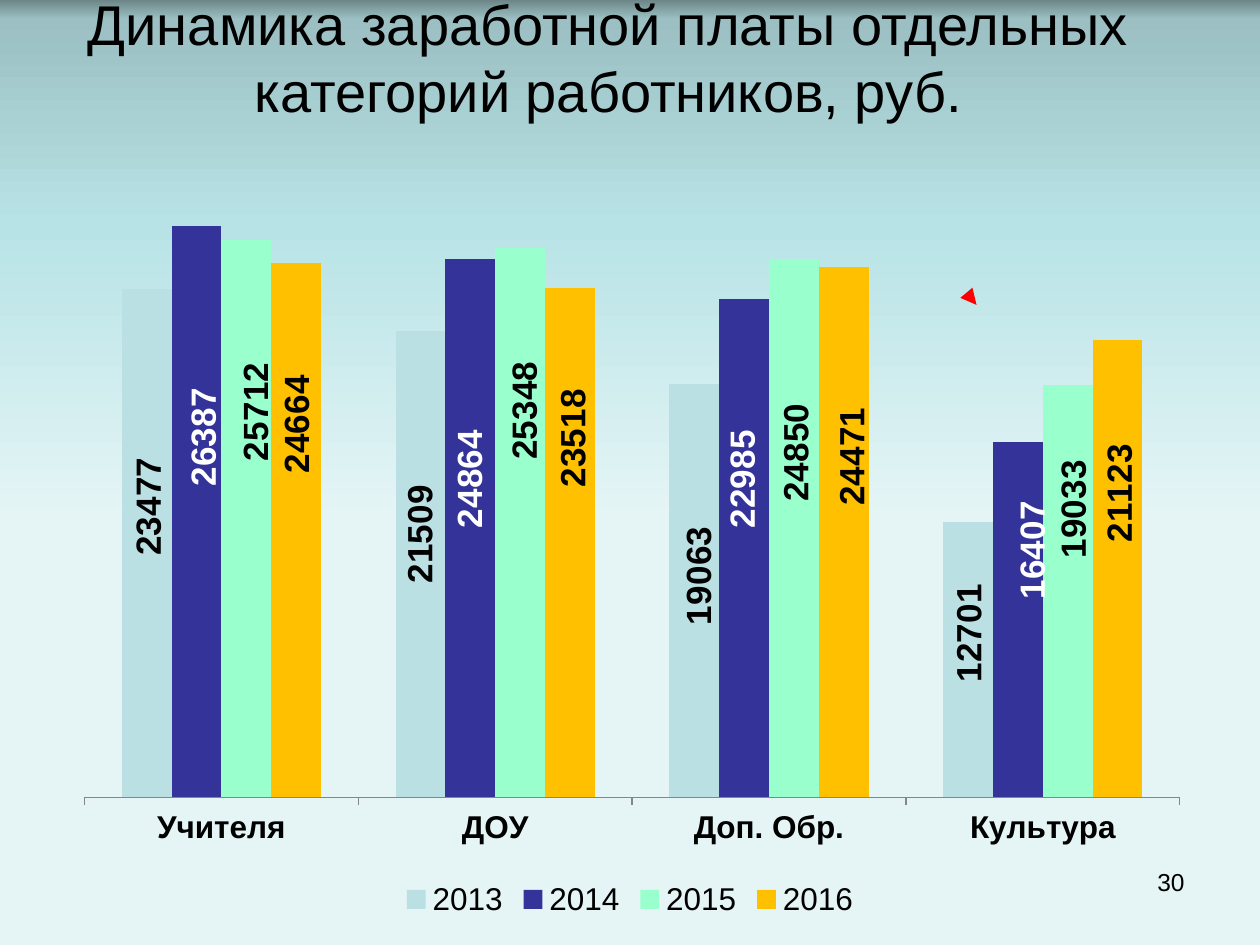
from lxml import etree
from pptx import Presentation
from pptx import util as u
from pptx.chart import data as chart_data
from pptx.dml import color
from pptx.enum import chart as charts, shapes, text
from pptx.oxml import parse_xml
from pptx.oxml.ns import nsdecls, qn

COLORS = {
    "black": "000000", "white": "FFFFFF", "red": "FF0000", "axis": "868686",
    "2013": "BBE0E3", "2014": "333399", "2015": "99FFCC", "2016": "FFC000",
}
BACKGROUND_STOPS = [(0, "6D8688"), (2, "9BBFC2"), (24, "B8E3E6"), (55, "E5F5F6")]
CATEGORIES = ["Учителя", "ДОУ", "Доп. Обр.", "Культура"]
SALARIES = {
    "2013": (23477, 21509, 19063, 12701),
    "2014": (26387, 24864, 22985, 16407),
    "2015": (25712, 25348, 24850, 19033),
    "2016": (24664, 23518, 24471, 21123),
}
LABEL_SHIFTS = {
    "2013": [(0.02, -0.29), (0, -0.24), (0.04, -0.12), (0.01, -0.21)],
    "2014": [(0.06, -0.59), (0, -0.39), (-0.01, -0.55), (0.12, -0.55)],
    "2015": [(0.08, -0.85), (0.04, -0.89), (0.02, -0.6), (0.05, -0.65)],
    "2016": [(0.01, -0.84), (0.03, -0.83), (0.07, -0.6), (0.02, -0.6)],
}
CHART_BOX = (0.5, 1, 9, 6.33)
PLOT_BOX = {"x": 0.019, "y": 0.027, "w": 0.966, "h": 0.815}


def rgb(name):
    return color.RGBColor.from_string(COLORS[name])


def set_attributes(target, values):
    for name, value in values.items():
        setattr(target, name, value)


def set_font(font, size, color_name="black", bold=False):
    set_attributes(font, {"name": "Arial", "size": u.Pt(size), "bold": bold})
    font.color.rgb = rgb(color_name)


def set_background(slide):
    fill = slide.background.fill
    fill.gradient()
    fill.gradient_angle = 270
    stops = slide._element.find(".//" + qn("a:gsLst"))
    for stop in list(stops):
        stops.remove(stop)
    for position, value in BACKGROUND_STOPS:
        stop = etree.SubElement(stops, qn("a:gs"), pos=str(position * 1000))
        etree.SubElement(stop, qn("a:srgbClr"), val=value)


def add_text(slide, box, content, size, alignment, anchor):
    shape = slide.shapes.add_textbox(*map(u.Inches, box))
    set_attributes(shape.text_frame, {"word_wrap": True, "vertical_anchor": anchor})
    paragraph = shape.text_frame.paragraphs[0]
    paragraph.alignment = alignment
    run = paragraph.add_run()
    run.text = content
    set_font(run.font, size)


def add_arrow(slide, start, end):
    arrow = slide.shapes.add_connector(
        shapes.MSO_CONNECTOR.STRAIGHT, *map(u.Inches, start + end))
    arrow.line.color.rgb = rgb("red")
    arrow.line.width = u.Pt(3)
    etree.SubElement(arrow.line._get_or_add_ln(), qn("a:tailEnd"), type="triangle")
    etree.SubElement(arrow._element.spPr, qn("a:effectLst"))


def manual_layout(values, inner=False):
    target = '<c:layoutTarget val="inner"/>' if inner else ""
    modes = '<c:xMode val="edge"/><c:yMode val="edge"/>' if inner else ""
    places = "".join(f'<c:{key} val="{value:.4f}"/>' for key, value in values.items())
    return parse_xml(
        f'<c:layout {nsdecls("c")}><c:manualLayout>{target}{modes}{places}'
        '</c:manualLayout></c:layout>')


def place_plot(chart):
    plot_area = chart._chartSpace.chart.plotArea
    for layout in plot_area.findall(qn("c:layout")):
        plot_area.remove(layout)
    plot_area.insert(0, manual_layout(PLOT_BOX, inner=True))


def label_point(series, index, shift):
    label = series.points[index].data_label
    set_font(label.font, 20, "white" if series.name == "2014" else "black", True)
    label.position = charts.XL_LABEL_POSITION.CENTER
    element = series._element.find(qn("c:dLbls")).findall(qn("c:dLbl"))[index]
    body = element.find(".//" + qn("a:bodyPr"))
    body.set("rot", "-5400000")
    body.set("vert", "horz")
    offsets = {"x": shift[0] / CHART_BOX[2], "y": shift[1] / CHART_BOX[3]}
    element.find(qn("c:idx")).addnext(manual_layout(offsets))


def hide_leader_lines(series):
    for leader in series._element.iter(qn("c:showLeaderLines")):
        leader.set("val", "0")


def style_axes(chart):
    set_attributes(chart.value_axis, {
        "visible": False, "has_major_gridlines": False,
        "minimum_scale": 0, "maximum_scale": 30000})
    axis = chart.category_axis
    set_attributes(axis, {
        "major_tick_mark": charts.XL_TICK_MARK.OUTSIDE, "has_major_gridlines": False})
    set_font(axis.tick_labels.font, 18, bold=True)
    axis.format.line.color.rgb = rgb("axis")
    axis.format.line.width = u.Pt(0.75)


def add_salary_chart(slide):
    values = chart_data.CategoryChartData()
    values.categories = CATEGORIES
    for year, salaries in SALARIES.items():
        values.add_series(year, salaries)
    chart = slide.shapes.add_chart(
        charts.XL_CHART_TYPE.COLUMN_CLUSTERED, *map(u.Inches, CHART_BOX), values).chart
    set_font(chart.font, 18)
    set_attributes(chart, {"has_title": False, "has_legend": True})
    set_attributes(chart.legend, {
        "position": charts.XL_LEGEND_POSITION.BOTTOM, "include_in_layout": False})
    set_font(chart.legend.font, 18)
    set_attributes(chart.plots[0], {
        "gap_width": 150, "overlap": 0, "vary_by_categories": False})
    style_axes(chart)
    place_plot(chart)
    for series in chart.plots[0].series:
        series.format.fill.solid()
        series.format.fill.fore_color.rgb = rgb(series.name)
        for index, shift in enumerate(LABEL_SHIFTS[series.name]):
            label_point(series, index, shift)
        hide_leader_lines(series)


def main():
    presentation = Presentation()
    set_attributes(presentation, {
        "slide_width": u.Inches(10), "slide_height": u.Inches(7.5)})
    slide = presentation.slides.add_slide(presentation.slide_layouts[6])
    set_background(slide)
    add_text(slide, (7.17, 6.83, 2.33, 0.52), "30", 14,
             text.PP_ALIGN.RIGHT, text.MSO_ANCHOR.TOP)
    add_text(slide, (0.33, -0.01, 9, 0.92),
             "Динамика заработной платы отдельных категорий работников, руб.", 32,
             text.PP_ALIGN.CENTER, text.MSO_ANCHOR.MIDDLE)
    add_arrow(slide, (7.7, 2.36), (7.75, 2.42))
    add_salary_chart(slide)
    presentation.save("out.pptx")


if __name__ == "__main__":
    main()
